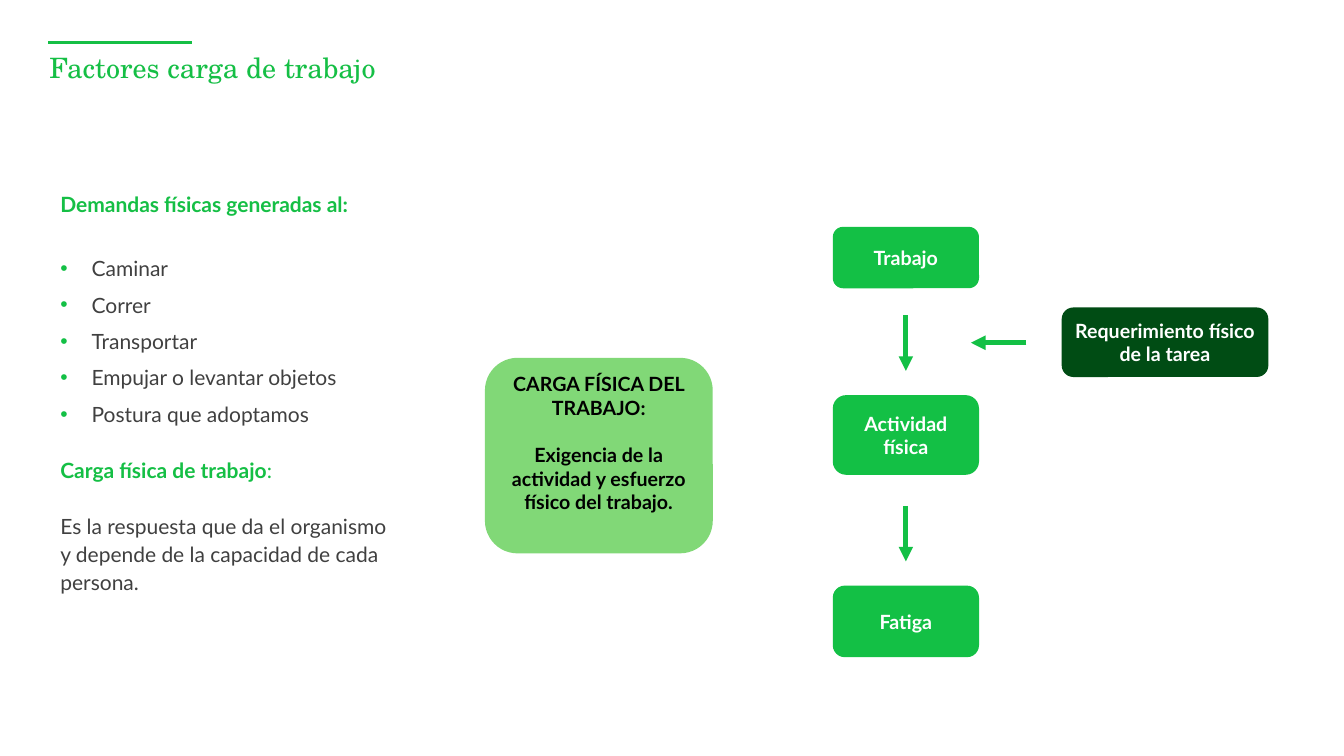
from dataclasses import dataclass

from lxml.etree import SubElement
from pptx import Presentation
from pptx.dml.color import RGBColor
from pptx.enum.shapes import MSO_CONNECTOR as CONN, MSO_SHAPE as SHAPE
from pptx.enum.text import MSO_ANCHOR as ANCHOR, PP_ALIGN as ALIGN
from pptx.oxml.ns import qn
from pptx.util import Inches, Pt


@dataclass(frozen=True)
class Theme:
    """Colours, fonts and type sizes of the slide."""
    title: str = "15BF45"
    flow: str = "13C045"
    card: str = "81D877"
    dark: str = "004C14"
    body: str = "404040"
    black: str = "000000"
    white: str = "FFFFFF"
    sans: str = "Lato"
    serif: str = "TeX Gyre Schola"
    title_pt: int = 20
    text_pt: int = 15
    box_pt: int = 14


T = Theme()


def add_run(p, text, size, color, bold=False, font=T.sans):
    """Add one styled run to a paragraph."""
    r = p.add_run()
    r.text = text
    r.font.name, r.font.size, r.font.bold = font, Pt(size), bold
    r.font.color.rgb = RGBColor.from_string(color)


def next_paragraph(tf):
    """Return the empty first paragraph, or a new one."""
    first = tf.paragraphs[0]
    return tf.add_paragraph() if first.runs else first


def add_textbox(s, x, y, w, h):
    """Add a wrapping text box and return its text frame."""
    tf = s.shapes.add_textbox(Inches(x), Inches(y), Inches(w), Inches(h)).text_frame
    tf.word_wrap = True
    return tf


def add_line(s, x1, y1, x2, y2, color, width, arrow=False):
    """Draw a straight line, with an optional arrowhead at its end."""
    line = s.shapes.add_connector(CONN.STRAIGHT, Inches(x1), Inches(y1), Inches(x2), Inches(y2))
    line.line.color.rgb = RGBColor.from_string(color)
    line.line.width = Pt(width)
    if arrow:
        SubElement(line.line._get_or_add_ln(), qn("a:tailEnd"), type="triangle")
    SubElement(line._element.spPr, qn("a:effectLst"))


def add_box(s, x, y, w, h, fill, color, texts, anchor=ANCHOR.MIDDLE, gap=0):
    """Draw a rounded box with centred bold paragraphs."""
    sp = s.shapes.add_shape(SHAPE.ROUNDED_RECTANGLE, Inches(x), Inches(y), Inches(w), Inches(h))
    sp.shadow.inherit = False
    sp.fill.solid()
    sp.fill.fore_color.rgb = RGBColor.from_string(fill)
    sp.line.fill.background()
    tf = sp.text_frame
    tf.word_wrap, tf.vertical_anchor = True, anchor
    for i, text in enumerate(texts):
        p = next_paragraph(tf)
        p.alignment = ALIGN.CENTER
        if i:
            p.space_before = Pt(gap)
        add_run(p, text, T.box_pt, color, True)


def add_bullet(p, indent, color):
    """Give a paragraph a coloured bullet with a hanging indent."""
    pPr = p._p.get_or_add_pPr()
    pPr.set("marL", str(Inches(indent)))
    pPr.set("indent", str(-Inches(indent)))
    SubElement(SubElement(pPr, qn("a:buClr")), qn("a:srgbClr"), val=color)
    SubElement(pPr, qn("a:buFont"), typeface="Arial")
    SubElement(pPr, qn("a:buChar"), char="•")


def build_header(s, x, y, w, h):
    """Place the accent rule and the title."""
    add_line(s, x, y, x + 1.42, y, T.title, 1.75)
    tf = add_textbox(s, x + 0.01, y + 0.12, w, h)
    tf.margin_left = tf.margin_right = tf.margin_top = tf.margin_bottom = 0
    p = tf.paragraphs[0]
    p.line_spacing = 0.9
    add_run(p, "Factores carga de trabajo", T.title_pt, T.title, font=T.serif)


def build_notes(s, x, y, w, h):
    """Place the headings, the bulleted demands and the definition."""
    tf = add_textbox(s, x, y, w, h)

    def paragraph(before=0):
        """Start a paragraph with the column's line pitch."""
        p = next_paragraph(tf)
        p.line_spacing = Pt(20)
        if before:
            p.space_before = Pt(before)
        return p

    add_run(paragraph(), "Demandas físicas generadas al:", T.text_pt, T.title, True)
    demands = ["Caminar", "Correr", "Transportar", "Empujar o levantar objetos",
               "Postura que adoptamos"]
    for i, demand in enumerate(demands):
        p = paragraph(6 if i else 26)
        add_bullet(p, 0.31, T.flow)
        add_run(p, demand, T.text_pt, T.body)
    p = paragraph(20)
    add_run(p, "Carga física de trabajo", T.text_pt, T.title, True)
    add_run(p, ":", T.text_pt, T.title)
    add_run(paragraph(20), "Es la respuesta que da el organismo y depende de la capacidad "
            "de cada persona.", T.text_pt, T.body)


def build_card(s, x, y, w, h):
    """Place the definition card."""
    add_box(s, x, y, w, h, T.card, T.black,
            ["CARGA FÍSICA DEL TRABAJO:",
             "Exigencia de la actividad y esfuerzo físico del trabajo."],
            ANCHOR.TOP, 17)


def build_flow(s, x, y, w):
    """Place the chain of steps, its arrows and the side requirement."""
    steps = [("Trabajo", 0, 0.61), ("Actividad física", 1.67, 0.79), ("Fatiga", 3.56, 0.71)]
    for text, dy, h in steps:
        add_box(s, x, y + dy, w, h, T.flow, T.white, [text])
    mid, length = x + w / 2, 0.55
    for dy in (0.88, 2.77):
        add_line(s, mid, y + dy, mid, y + dy + length, T.flow, 3.5, True)
    add_box(s, x + 2.27, y + 0.8, 2.05, 0.69, T.dark, T.white,
            ["Requerimiento físico de la tarea"])
    start, level = x + 1.92, y + 1.15
    add_line(s, start, level, start - length, level, T.flow, 3.5, True)


def main():
    """Build and save the slide."""
    prs = Presentation()
    prs.slide_width, prs.slide_height = Inches(13.33), Inches(7.5)
    s = prs.slides.add_slide(prs.slide_layouts[6])
    build_header(s, 0.48, 0.42, 10.79, 0.57)
    build_notes(s, 0.5, 1.82, 3.52, 4.14)
    build_card(s, 4.81, 3.55, 2.26, 1.94)
    build_flow(s, 8.26, 2.25, 1.45)
    prs.save("out.pptx")


if __name__ == "__main__":
    main()
